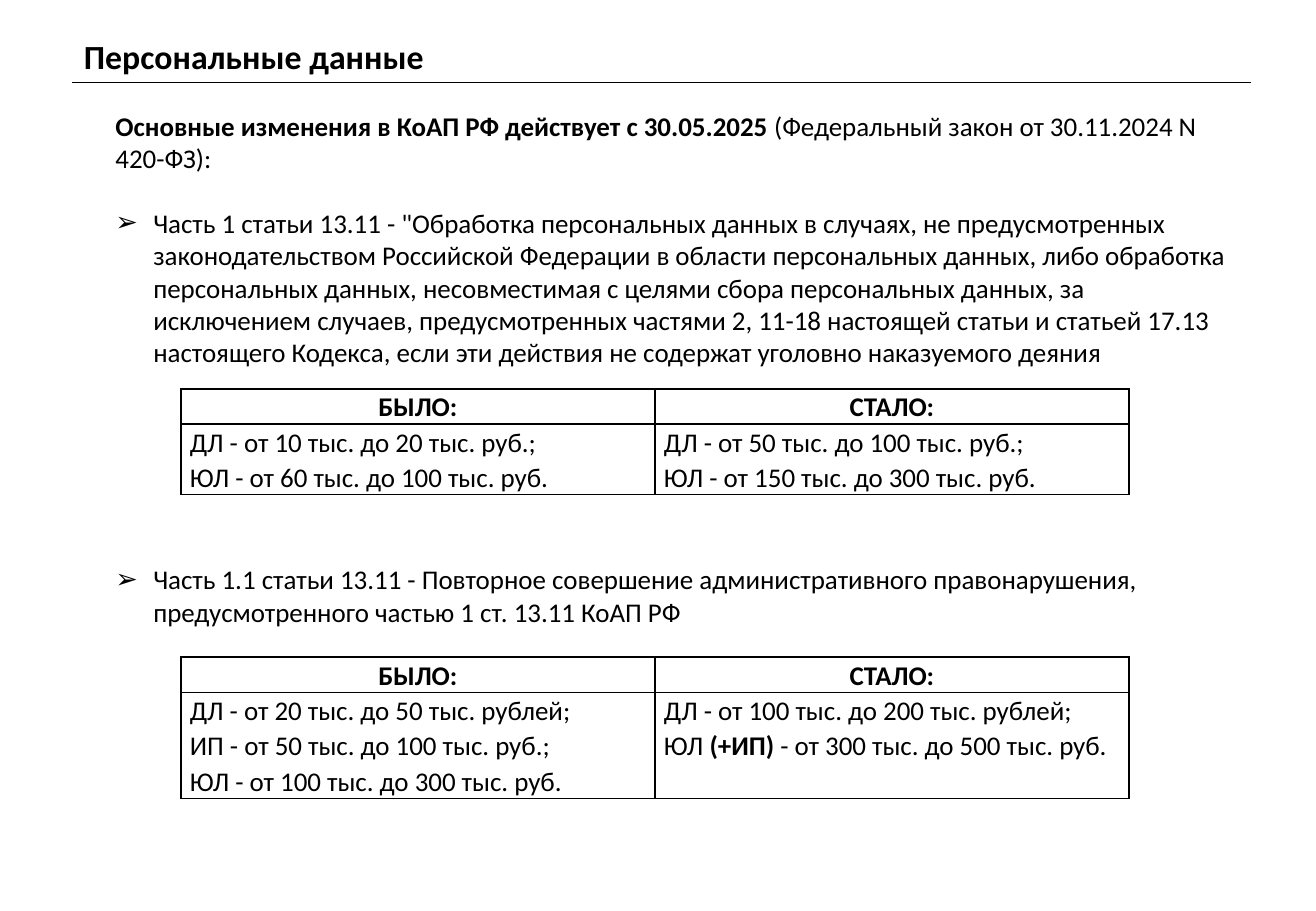
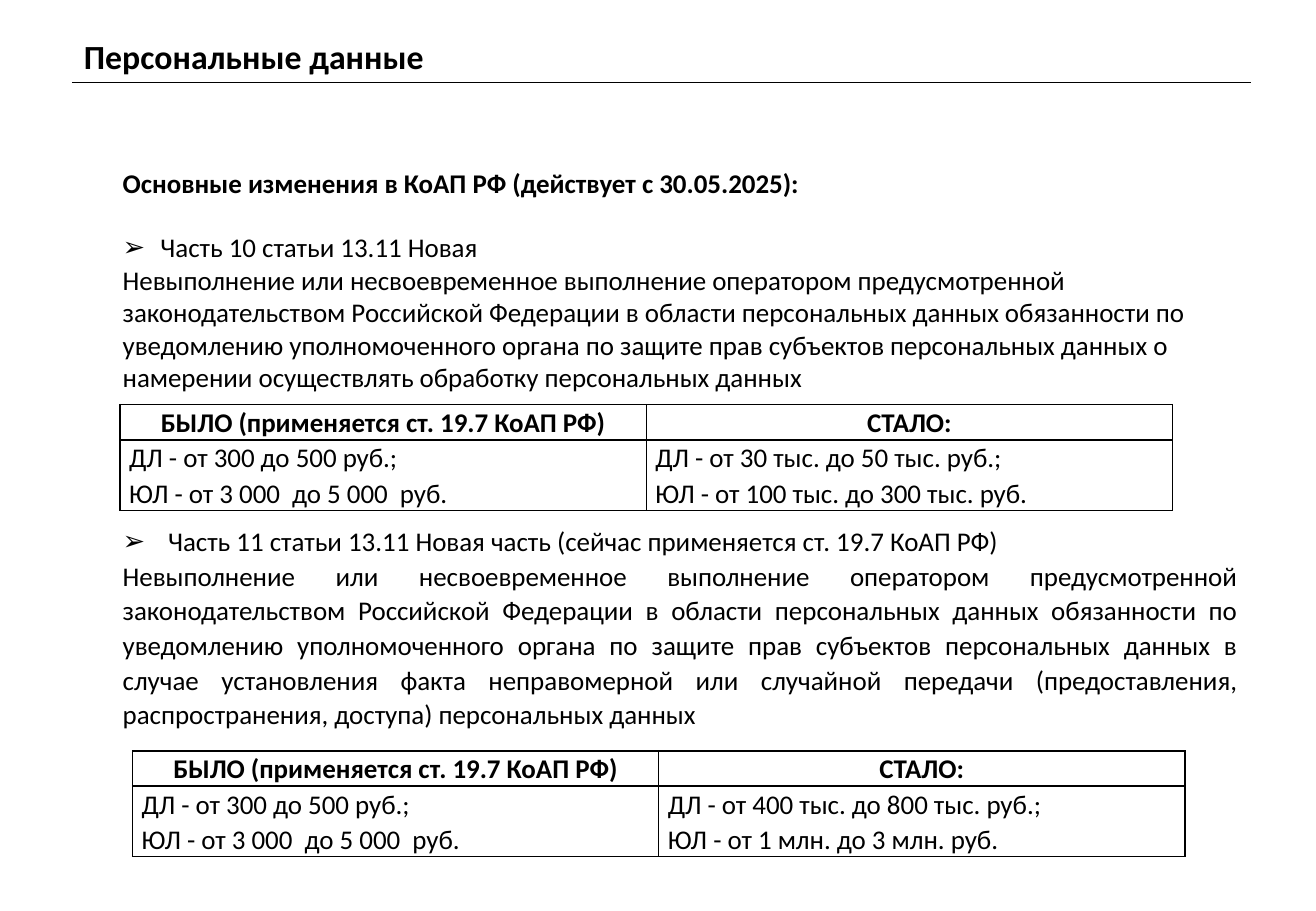
from dataclasses import dataclass

from lxml import etree
from pptx import Presentation
from pptx.dml.color import RGBColor
from pptx.enum import shapes, text
from pptx.oxml import ns
from pptx.util import Cm, Pt

TITLE = "Персональные данные"
WAS, NOW = "БЫЛО:", "СТАЛО:"
WAS_OTHER_ARTICLE = "БЫЛО (применяется ст. 19.7 КоАП РФ)"
OLD_FINES = ["ДЛ - от 300 до 500 руб.;", "ЮЛ - от 3 000  до 5 000  руб."]
DUTY = (
    "Невыполнение или несвоевременное выполнение оператором предусмотренной "
    "законодательством Российской Федерации в области персональных данных обязанности по "
    "уведомлению уполномоченного органа по защите прав субъектов персональных данных "
)

SLIDES = [
    {
        "body": (2.16, 2.16, 23.83, 13.26),
        "paragraphs": [
            {"runs": [("Основные изменения в КоАП РФ действует с 30.05.2025", True),
                      (" (Федеральный закон от 30.11.2024 N 420-ФЗ):", False)]},
            {"runs": 'Часть 1 статьи 13.11 - "Обработка персональных данных в случаях, не '
                     "предусмотренных законодательством Российской Федерации в области "
                     "персональных данных, либо обработка персональных данных, несовместимая "
                     "с целями сбора персональных данных, за исключением случаев, "
                     "предусмотренных частями 2, 11-18 настоящей статьи и статьей 17.13 "
                     "настоящего Кодекса, если эти действия не содержат уголовно наказуемого "
                     "деяния",
             "indent": 0.79, "lines_before": 1},
            {"runs": "Часть 1.1 статьи 13.11 - Повторное совершение административного "
                     "правонарушения, предусмотренного частью 1 ст. 13.11 КоАП РФ",
             "indent": 0.79, "lines_before": 6},
        ],
        "column": 9.91,
        "tables": [
            (3.78, 8.13, [WAS, NOW], [
                ["ДЛ - от 10 тыс. до 20 тыс. руб.;", "ЮЛ - от 60 тыс. до 100 тыс. руб."],
                ["ДЛ - от 50 тыс. до 100 тыс. руб.;", "ЮЛ - от 150 тыс. до 300 тыс. руб."]]),
            (3.78, 13.74, [WAS, NOW], [
                ["ДЛ - от 20 тыс. до 50 тыс. рублей;", "ИП - от 50 тыс. до 100 тыс. руб.;",
                 "ЮЛ - от 100 тыс. до 300 тыс. руб."],
                ["ДЛ - от 100 тыс. до 200 тыс. рублей;",
                 [("ЮЛ ", False), ("(+ИП) ", True),
                  ("- от 300 тыс. до 500 тыс. руб.", False)]]]),
        ],
    },
    {
        "body": (2.31, 3.35, 23.83, 15.06),
        "paragraphs": [
            {"runs": "Основные изменения в КоАП РФ (действует с 30.05.2025):", "bold": True},
            {"runs": "Часть 10 статьи 13.11 Новая", "indent": 0.79, "lines_before": 1},
            {"runs": DUTY + "о намерении осуществлять обработку персональных данных"},
            {"runs": "Часть 11 статьи 13.11 Новая часть (сейчас применяется ст. 19.7 КоАП РФ)",
             "indent": 0.95, "lines_before": 4, "justified": True},
            {"runs": DUTY + "в случае установления факта неправомерной или случайной передачи "
                            "(предоставления, распространения, доступа) персональных данных",
             "justified": True},
        ],
        "column": 11,
        "tables": [
            (2.51, 8.46, [WAS_OTHER_ARTICLE, NOW], [
                OLD_FINES,
                ["ДЛ - от 30 тыс. до 50 тыс. руб.;", "ЮЛ - от 100 тыс. до 300 тыс. руб."]]),
            (2.77, 15.7, [WAS_OTHER_ARTICLE, NOW], [
                OLD_FINES,
                ["ДЛ - от 400 тыс. до 800 тыс. руб.;", "ЮЛ - от 1 млн. до 3 млн. руб."]]),
        ],
    },
]


@dataclass(frozen=True)
class Theme:
    font: str = "Calibri"
    ink: RGBColor = RGBColor(0, 0, 0)
    title_size: Pt = Pt(20)
    text_size: Pt = Pt(16)
    blank_line: float = 19.2
    loose: float = 1.07
    rule: Pt = Pt(0.75)
    border: Pt = Pt(1)
    row_line: float = 0.73
    cell_margin: Cm = Cm(0.19)


THEME = Theme()
ALIGN = text.PP_ALIGN


def place(shape, left, top, width, height):
    shape.left, shape.top, shape.width, shape.height = map(Cm, (left, top, width, height))


def set_font(font, size, bold):
    font.name, font.size, font.bold = THEME.font, size, bold
    font.color.rgb = THEME.ink


def write(paragraph, runs, align, bold=False, size=THEME.text_size):
    paragraph.alignment = align
    set_font(paragraph.font, size, bold)
    if isinstance(runs, str):
        paragraph.add_run().text = runs
        return
    for content, strong in runs:
        run = paragraph.add_run()
        run.text = content
        run.font.bold = strong


def paragraphs_of(frame, count):
    return [frame.paragraphs[0]] + [frame.add_paragraph() for _ in range(count - 1)]


def set_bullet(paragraph, indent):
    properties = paragraph._p.get_or_add_pPr()
    properties.set("marL", str(Cm(indent)))
    properties.set("indent", str(-Cm(indent)))
    if indent:
        etree.SubElement(properties, ns.qn("a:buChar"), char="➢")
    else:
        etree.SubElement(properties, ns.qn("a:buNone"))


def fill_body(body, items):
    frame = body.text_frame
    frame.auto_size = text.MSO_AUTO_SIZE.NONE
    for paragraph, item in zip(paragraphs_of(frame, len(items)), items):
        justified = item.get("justified", False)
        paragraph.line_spacing = THEME.loose if justified else 1.0
        paragraph.space_before = Pt(THEME.blank_line * item.get("lines_before", 0))
        set_bullet(paragraph, item.get("indent", 0))
        write(paragraph, item["runs"], ALIGN.JUSTIFY if justified else ALIGN.LEFT,
              item.get("bold", False))


def add_borders(cell):
    properties = cell._tc.get_or_add_tcPr()
    for side in ("lnL", "lnR", "lnT", "lnB"):
        line = etree.SubElement(properties, ns.qn(f"a:{side}"), w=str(THEME.border))
        fill = etree.SubElement(line, ns.qn("a:solidFill"))
        etree.SubElement(fill, ns.qn("a:srgbClr"), val=str(THEME.ink))


def fill_cell(cell, lines, align, bold):
    add_borders(cell)
    cell.fill.background()
    cell.margin_left = cell.margin_right = THEME.cell_margin
    cell.margin_top = cell.margin_bottom = 0
    for paragraph, runs in zip(paragraphs_of(cell.text_frame, len(lines)), lines):
        paragraph.line_spacing = THEME.loose
        write(paragraph, runs, align, bold)


def add_fines_table(slide, column_width, left, top, headings, fines):
    heights = [THEME.row_line, THEME.row_line * max(map(len, fines))]
    table = slide.shapes.add_table(
        2, len(headings), Cm(left), Cm(top),
        Cm(column_width * len(headings)), Cm(sum(heights))).table
    table.first_row = table.horz_banding = False
    for row, height in zip(table.rows, heights):
        row.height = Cm(height)
    for index, (heading, lines) in enumerate(zip(headings, fines)):
        table.columns[index].width = Cm(column_width)
        fill_cell(table.cell(0, index), [heading], ALIGN.CENTER, True)
        fill_cell(table.cell(1, index), lines, ALIGN.JUSTIFY, False)


def add_header(slide):
    frame = slide.shapes.title.text_frame
    frame.auto_size = text.MSO_AUTO_SIZE.NONE
    write(frame.paragraphs[0], TITLE, ALIGN.LEFT, True, THEME.title_size)
    rule = slide.shapes.add_connector(
        shapes.MSO_CONNECTOR.STRAIGHT, Cm(1.5), Cm(1.73), Cm(26.16), Cm(1.73))
    rule.line.color.rgb = THEME.ink
    rule.line.width = THEME.rule
    etree.SubElement(rule._element.spPr, ns.qn("a:effectLst"))


def main():
    presentation = Presentation()
    presentation.slide_width, presentation.slide_height = Cm(27.51), Cm(19.05)
    layout = presentation.slide_layouts[1]
    layout_title = layout.placeholders[0]
    place(layout_title, 1.5, 0.61, 19.61, 1.12)
    layout_title.text_frame.vertical_anchor = text.MSO_ANCHOR.TOP
    for content in SLIDES:
        slide = presentation.slides.add_slide(layout)
        add_header(slide)
        body = slide.placeholders[1]
        place(body, *content["body"])
        fill_body(body, content["paragraphs"])
        for table in content["tables"]:
            add_fines_table(slide, content["column"], *table)
    presentation.save("out.pptx")


if __name__ == "__main__":
    main()
